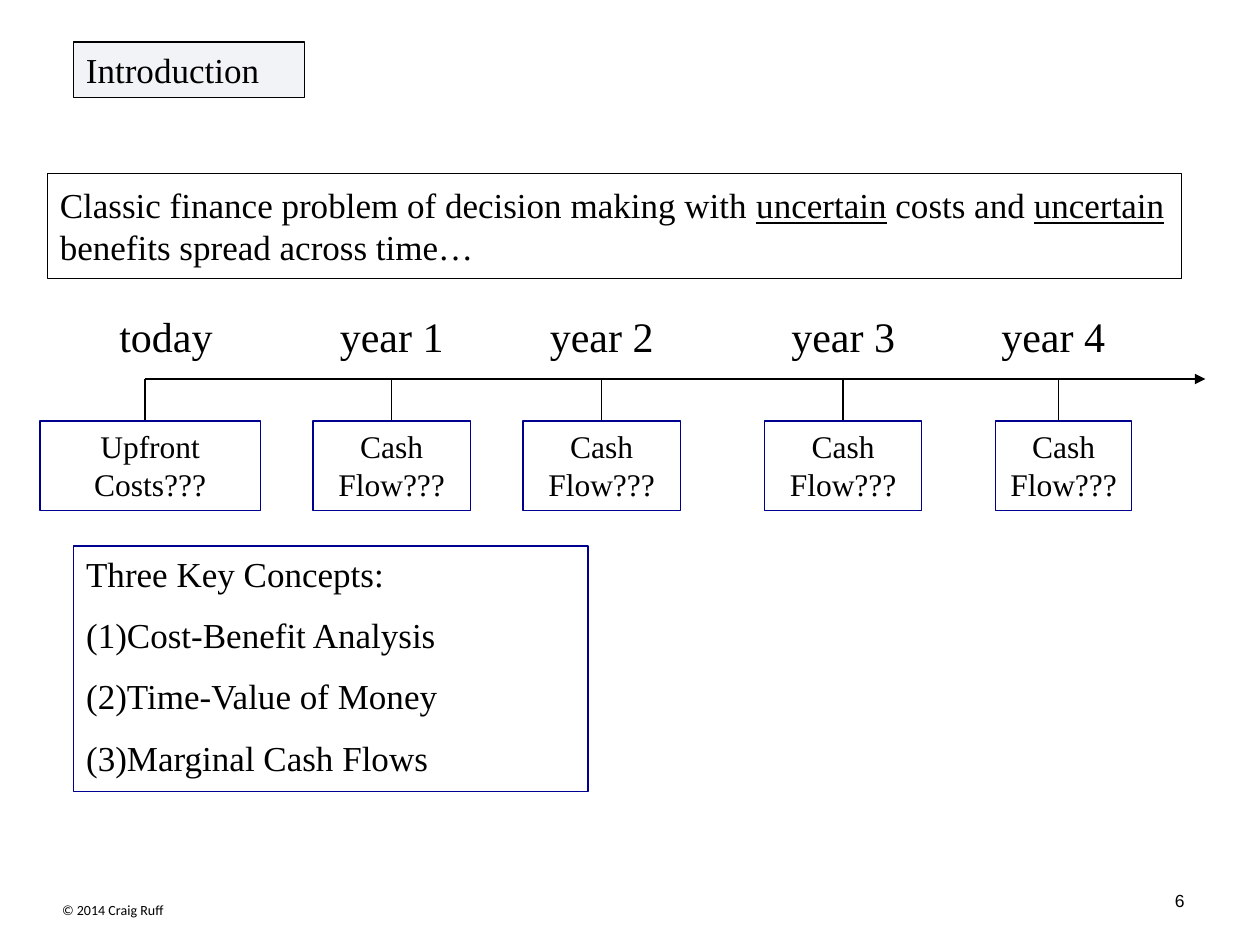
import dataclasses

import pptx
import pptx.dml.color
import pptx.enum.shapes
import pptx.enum.text
import pptx.oxml.ns
import pptx.util
from lxml import etree

ALIGN = pptx.enum.text.PP_ALIGN
ANCHOR = pptx.enum.text.MSO_ANCHOR
SHAPES = pptx.enum.shapes
COLUMNS, ROWS = 120, 90


@dataclasses.dataclass(frozen=True)
class Theme:
    """Colours, fonts and type sizes of the slide."""
    ink: str = "000000"
    frame: str = "000090"
    tint: str = "002060"
    tint_alpha: int = 5000
    serif: str = "Times New Roman"
    number_font: str = "Arial"
    footer_font: str = "Calibri"
    label: int = 24
    text: int = 20
    cash: int = 18
    number: int = 10
    footer: int = 8
    line: float = 0.75
    gap: int = 11


@dataclasses.dataclass(frozen=True)
class Box:
    """A rectangle in grid columns and rows."""
    left: float
    top: float
    width: float
    height: float

    def inner(self, left, top, width, height):
        """Return a box placed relative to this one."""
        return Box(self.left + left, self.top + top, width, height)


THEME = Theme()
CELL = pptx.util.Inches(10) / COLUMNS


def grid(value):
    """Turn grid units into a length."""
    return pptx.util.Emu(round(value * CELL))


def bounds(box):
    """Return the four lengths of a box."""
    return [grid(value) for value in dataclasses.astuple(box)]


def color(value):
    """Return an RGB colour."""
    return pptx.dml.color.RGBColor.from_string(value)


def child(parent, tag, **attributes):
    """Append a drawing element and return it."""
    return etree.SubElement(parent, pptx.oxml.ns.qn(tag), attributes)


def outline(shape, line_color):
    """Give a shape or connector a thin line."""
    shape.line.color.rgb = color(line_color)
    shape.line.width = pptx.util.Pt(THEME.line)


def write(shape, paragraphs, size, font=THEME.serif, align=ALIGN.LEFT, anchor=ANCHOR.TOP):
    """Fill a shape with paragraphs given as lists of (text, underlined)."""
    frame = shape.text_frame
    frame.auto_size = pptx.enum.text.MSO_AUTO_SIZE.NONE
    frame.word_wrap = True
    frame.vertical_anchor = anchor
    for index, runs in enumerate(paragraphs):
        paragraph = frame.add_paragraph() if index else frame.paragraphs[0]
        paragraph.alignment = align
        paragraph.space_before = pptx.util.Pt(THEME.gap if index else 0)
        for text, underlined in runs:
            run = paragraph.add_run()
            run.text = text
            run.font.size = pptx.util.Pt(size)
            run.font.name = font
            run.font.color.rgb = color(THEME.ink)
            run.font.underline = underlined


def add_text(slide, box, text, size, **style):
    """Add a plain text box."""
    write(slide.shapes.add_textbox(*bounds(box)), [[(text, False)]], size, **style)


def add_frame(slide, box, text, size, line_color, **style):
    """Add an outlined rectangle with text and return it."""
    shape = slide.shapes.add_shape(SHAPES.MSO_SHAPE.RECTANGLE, *bounds(box))
    shape.shadow.inherit = False
    shape.fill.background()
    outline(shape, line_color)
    write(shape, [[(text, False)]], size, **style)
    return shape


def add_line(slide, left, top, right, bottom, arrow=False):
    """Add a straight line, with an arrowhead at its end if asked."""
    line = slide.shapes.add_connector(
        SHAPES.MSO_CONNECTOR.STRAIGHT, *[grid(value) for value in (left, top, right, bottom)])
    outline(line, THEME.ink)
    properties = line._element.spPr
    if arrow:
        child(properties.find(pptx.oxml.ns.qn("a:ln")), "a:tailEnd", type="triangle")
    child(properties, "a:effectLst")


def add_heading(slide, box):
    """Add the tinted section heading."""
    shape = add_frame(slide, box, "Introduction", THEME.text, THEME.ink)
    shape.fill.solid()
    shape.fill.fore_color.rgb = color(THEME.tint)
    tint = shape._element.spPr.find(".//" + pptx.oxml.ns.qn("a:srgbClr"))
    child(tint, "a:alpha", val=str(THEME.tint_alpha))


def add_statement(slide, box):
    """Place the problem statement in the title placeholder."""
    title = slide.shapes.title
    title.left, title.top, title.width, title.height = bounds(box)
    outline(title, THEME.ink)
    write(title, [[("Classic finance problem of decision making with ", False),
                   ("uncertain", True), (" costs and ", False), ("uncertain", True),
                   (" benefits spread across time…", False)]],
          THEME.text, anchor=ANCHOR.MIDDLE)


def add_timeline(slide, box):
    """Add the time axis with its labels, ticks and cash flow boxes."""
    milestones = [
        ("today", "Upfront Costs???", 10, 12, 10.5, 21),
        ("year 1", "Cash Flow???", 33.5, 33.5, 33.5, 15),
        ("year 2", "Cash Flow???", 53.5, 53.5, 53.5, 15),
        ("year 3", "Cash Flow???", 76.5, 76.5, 76.5, 15),
        ("year 4", "Cash Flow???", 97, 96.5, 97.5, 13),
    ]
    axis, flow_top, label_width = box.top + 7.1, 11.1, 16
    add_line(slide, box.left + milestones[0][2], axis, box.left + box.width, axis, arrow=True)
    for label, flow, tick, label_center, flow_center, width in milestones:
        add_text(slide, box.inner(label_center - label_width / 2, 0, label_width, 6), label,
                 THEME.label, align=ALIGN.CENTER)
        add_line(slide, box.left + tick, axis, box.left + tick, box.top + flow_top)
        add_frame(slide, box.inner(flow_center - width / 2, flow_top, width, 8.5), flow,
                  THEME.cash, THEME.frame, align=ALIGN.CENTER)


def add_concepts(slide, box):
    """Place the numbered key concepts in the body placeholder."""
    body = slide.placeholders[1]
    body.left, body.top, body.width, body.height = bounds(box)
    outline(body, THEME.frame)
    lines = ["Three Key Concepts:", "Cost-Benefit Analysis", "Time-Value of Money",
             "Marginal Cash Flows"]
    write(body, [[(line, False)] for line in lines], THEME.text)
    for index, paragraph in enumerate(body.text_frame.paragraphs):
        properties = paragraph._p.get_or_add_pPr()
        properties.set("marL", "0")
        properties.set("indent", "0")
        if index:
            child(properties, "a:buFont", typeface=THEME.serif)
            child(properties, "a:buAutoNum", type="arabicParenBoth")
        else:
            child(properties, "a:buNone")


def add_footer(slide, box):
    """Add the copyright line and the slide number."""
    add_text(slide, box.inner(0, 1.9, 14.5, 2.9), "© 2014 Craig Ruff", THEME.footer,
             font=THEME.footer_font, align=ALIGN.CENTER)
    add_text(slide, box.inner(box.width - 28, 0, 28, 4.8), "6", THEME.number,
             font=THEME.number_font, align=ALIGN.RIGHT, anchor=ANCHOR.MIDDLE)


def main():
    """Build and save the slide."""
    presentation = pptx.Presentation()
    presentation.slide_width, presentation.slide_height = grid(COLUMNS), grid(ROWS)
    slide = presentation.slides.add_slide(presentation.slide_layouts[1])
    add_statement(slide, Box(4.5, 16.5, 108, 10))
    add_timeline(slide, Box(3.8, 29, 111, 19.6))
    add_concepts(slide, Box(7, 52, 49, 23.4))
    add_footer(slide, Box(3.5, 83.4, 110.5, 4.8))
    add_heading(slide, Box(7, 4, 22, 5.3))
    presentation.save("out.pptx")


if __name__ == "__main__":
    main()
